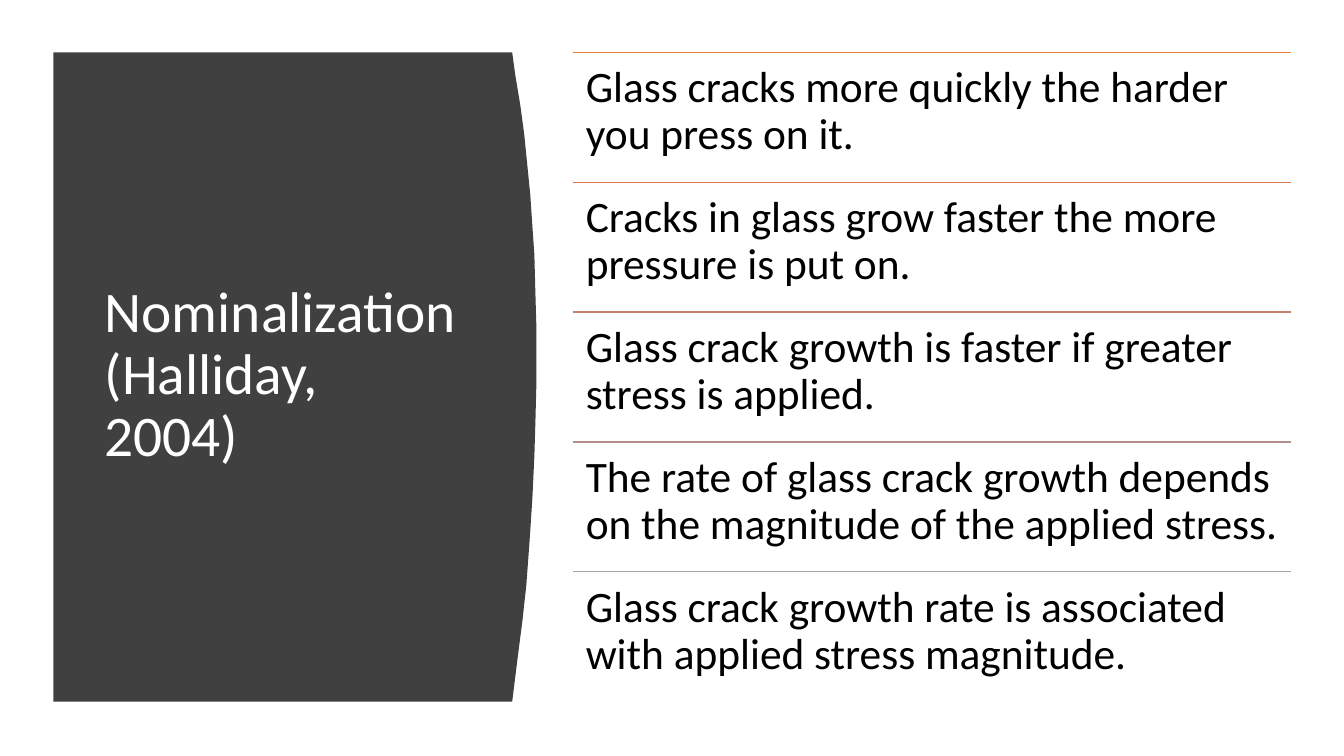
import pptx
import pptx.util
import pptx.dml.color
import pptx.enum.shapes
import pptx.enum.text
import pptx.oxml
from pptx.util import Inches

TITLE = "Nominalization (Halliday, 2004)"
SENTENCES = [
    ("Glass cracks more quickly the harder you press on it.", "ED7D31"),
    ("Cracks in glass grow faster the more pressure is put on.", "D87A51"),
    ("Glass crack growth is faster if greater stress is applied.", "C48170"),
    ("The rate of glass crack growth depends on the magnitude of the applied stress.", "B4908B"),
    ("Glass crack growth rate is associated with applied stress magnitude.", "A5A5A5"),
]
THEME = {
    "font": "Calibri", "title_size": 41, "sentence_size": 31, "rule_width": 1,
    "panel": "404040", "title": "FFFFFF", "sentence": "000000",
}
TOP, BOTTOM = 0.52, 6.96
PANEL_LEFT = 0.53
PANEL_CURVE = [
    (5.08, TOP), (5.11, 0.74), (5.16, 1.04), (5.2, 1.34), (5.23, 1.64),
    (5.26, 1.94), (5.28, 2.24), (5.3, 2.53), (5.31, 2.9), (5.32, 3.25),
    (5.32, 3.8), (5.31, 4.2), (5.3, 4.52), (5.28, 4.95), (5.25, 5.4),
    (5.22, 5.81), (5.18, 6.17), (5.14, 6.48), (5.11, 6.72), (5.08, BOTTOM),
]
LIST_LEFT, LIST_WIDTH = 5.68, 7.12
ROW_HEIGHT = (BOTTOM - TOP) / len(SENTENCES)


def rgb(value):
    return pptx.dml.color.RGBColor.from_string(value)


def add_text(slide, text, box, size, color, anchor, margins):
    frame = slide.shapes.add_textbox(*map(Inches, box)).text_frame
    frame.word_wrap = True
    frame.vertical_anchor = anchor
    (frame.margin_left, frame.margin_top,
     frame.margin_right, frame.margin_bottom) = map(Inches, margins)
    paragraph = frame.paragraphs[0]
    paragraph.text = text
    paragraph.line_spacing = 0.9
    paragraph.font.name = THEME["font"]
    paragraph.font.size = pptx.util.Pt(size)
    paragraph.font.color.rgb = rgb(color)


def add_panel(slide):
    outline = slide.shapes.build_freeform(
        Inches(PANEL_LEFT), Inches(TOP), scale=1.0)
    corners = PANEL_CURVE + [(PANEL_LEFT, BOTTOM)]
    outline.add_line_segments([(Inches(x), Inches(y)) for x, y in corners])
    panel = outline.convert_to_shape()
    panel.shadow.inherit = False
    panel.fill.solid()
    panel.fill.fore_color.rgb = rgb(THEME["panel"])
    panel.line.fill.background()


def add_rule(slide, y, color):
    rule = slide.shapes.add_connector(
        pptx.enum.shapes.MSO_CONNECTOR.STRAIGHT,
        Inches(LIST_LEFT), Inches(y), Inches(LIST_LEFT + LIST_WIDTH), Inches(y))
    rule.line.color.rgb = rgb(color)
    rule.line.width = pptx.util.Pt(THEME["rule_width"])
    rule._element.spPr.append(pptx.oxml.parse_xml(
        '<a:effectLst xmlns:a="http://schemas.openxmlformats.org/drawingml/2006/main"/>'))


def main():
    deck = pptx.Presentation()
    deck.slide_width, deck.slide_height = Inches(13.33), Inches(7.5)
    slide = deck.slides.add_slide(deck.slide_layouts[6])
    anchors = pptx.enum.text.MSO_ANCHOR

    add_panel(slide)
    add_text(slide, TITLE, (0.94, 1.11, 3.74, 5.24), THEME["title_size"],
             THEME["title"], anchors.MIDDLE, (0.1, 0.05, 0.1, 0.05))
    for row, (sentence, rule_color) in enumerate(SENTENCES):
        y = TOP + row * ROW_HEIGHT
        add_rule(slide, y, rule_color)
        add_text(slide, sentence, (LIST_LEFT, y, LIST_WIDTH, ROW_HEIGHT),
                 THEME["sentence_size"], THEME["sentence"], anchors.TOP,
                 (0.13, 0.13, 0.1, 0.13))
    deck.save("out.pptx")


if __name__ == "__main__":
    main()
